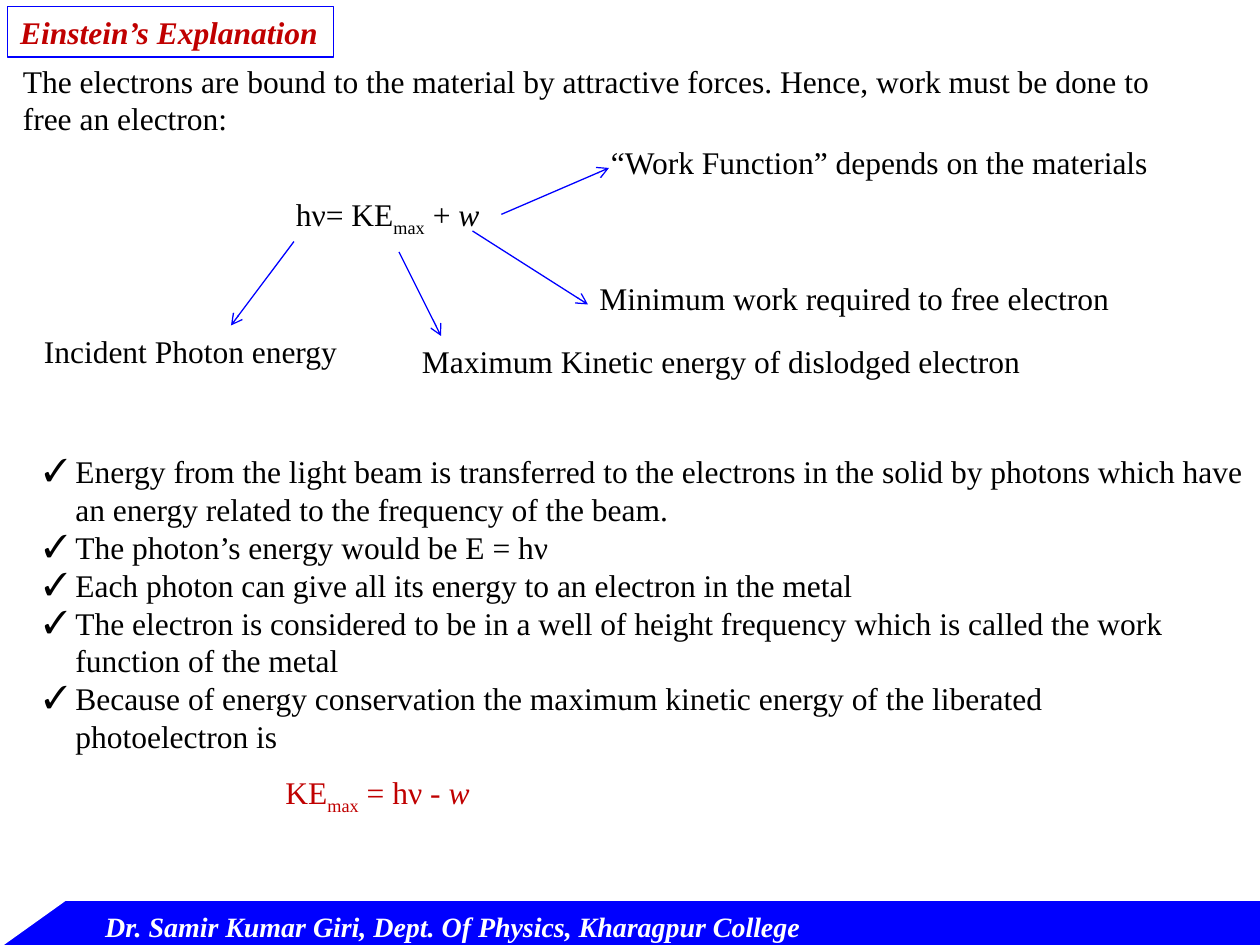
"""Build the slide on Einstein's explanation of the photoelectric effect."""
from dataclasses import dataclass

from lxml.etree import SubElement
from pptx import Presentation
from pptx.dml.color import RGBColor
from pptx.enum.shapes import MSO_CONNECTOR as Connector, MSO_SHAPE as Preset
from pptx.enum.text import MSO_ANCHOR as Anchor, MSO_AUTO_SIZE as AutoSize, PP_ALIGN as Align
from pptx.oxml.ns import qn
from pptx.util import Pt

FONT = "Times New Roman"
BLACK, WHITE, BLUE, RED = "000000", "FFFFFF", "0000FF", "C00000"


@dataclass(frozen=True)
class Box:
    left: float
    top: float
    width: float
    height: float

    def lengths(self) -> tuple:
        return Pt(self.left), Pt(self.top), Pt(self.width), Pt(self.height)


@dataclass(frozen=True)
class Label:
    text: str
    box: Box
    wrap: bool = False


@dataclass(frozen=True)
class Formula:
    pieces: tuple
    box: Box
    color: str


@dataclass(frozen=True)
class Arrow:
    start: tuple
    end: tuple


TITLE = Label("Einstein’s Explanation", Box(4.3, 3.6, 186.5, 29))
LABELS = (
    Label(
        "The electrons are bound to the material by attractive forces. "
        "Hence, work must be done to free an electron:",
        Box(6, 31.7, 684, 51),
        wrap=True,
    ),
    Label("Incident Photon energy", Box(18, 186, 187, 29)),
    Label("Maximum Kinetic energy of dislodged electron", Box(234, 192, 358.5, 29)),
    Label("“Work Function” depends on the materials", Box(342, 78, 339, 29)),
    Label("Minimum work required to free electron", Box(335.5, 156, 318, 29)),
)
FORMULAS = (
    Formula(("hν= KE", "max", " + ", "w"), Box(162, 108, 124.5, 29), BLACK),
    Formula(("KE", "max", " = hν - ", "w"), Box(156, 438, 126, 29), RED),
)
ARROWS = (
    Arrow((168, 138), (132, 186)),
    Arrow((228, 144), (252, 192)),
    Arrow((286.5, 122.5), (348, 96)),
    Arrow((270, 132), (336, 174)),
)
POINTS = (
    "Energy from the light beam is transferred to the electrons in the solid "
    "by photons which have an energy related to the frequency of the beam.",
    "The photon’s energy would be E = hν",
    "Each photon can give all its energy to an electron in the metal",
    "The electron is considered to be in a well of height frequency "
    "which is called the work function of the metal",
    "Because of energy conservation the maximum kinetic energy of the liberated\v"
    "photoelectron is",
)
POINTS_BOX = Box(18, 255, 702, 182)
FOOTER = Label(
    "Dr. Samir Kumar Giri, Dept. Of Physics, Kharagpur College", Box(53, 516, 433, 26.6)
)


def rgb(color: str) -> RGBColor:
    return RGBColor.from_string(color)


def format_text(frame, color: str, size: float = 18, strong: bool = False) -> None:
    for paragraph in frame.paragraphs:
        paragraph.alignment = Align.LEFT
        for run in paragraph.runs:
            run.font.name = FONT
            run.font.size = Pt(size)
            run.font.color.rgb = rgb(color)
            run.font.bold = run.font.italic = strong


def add_text(slide, label: Label, color: str = BLACK, size: float = 18, strong: bool = False):
    frame = slide.shapes.add_textbox(*label.box.lengths()).text_frame
    frame.text = label.text
    frame.word_wrap = label.wrap
    frame.auto_size = AutoSize.SHAPE_TO_FIT_TEXT
    format_text(frame, color, size, strong)
    return frame


def add_title(slide) -> None:
    title = slide.shapes.title
    title.left, title.top, title.width, title.height = TITLE.box.lengths()
    title.line.color.rgb = rgb(BLUE)
    title.line.width = Pt(0.75)
    frame = title.text_frame
    frame.text = TITLE.text
    frame.word_wrap = True
    frame.auto_size = AutoSize.NONE
    frame.vertical_anchor = Anchor.TOP
    format_text(frame, RED, strong=True)


def add_formula(slide, formula: Formula) -> None:
    frame = add_text(slide, Label("", formula.box))
    paragraph = frame.paragraphs[0]
    for piece in formula.pieces:
        paragraph.add_run().text = piece
    format_text(frame, formula.color)
    paragraph.runs[1]._r.get_or_add_rPr().set("baseline", "-25000")
    paragraph.runs[-1].font.italic = True


def add_arrow(slide, arrow: Arrow) -> None:
    ends = [Pt(value) for value in arrow.start + arrow.end]
    connector = slide.shapes.add_connector(Connector.STRAIGHT, *ends)
    connector.line.color.rgb = rgb(BLUE)
    connector.line.width = Pt(0.75)
    properties = connector._element.spPr
    SubElement(properties.find(qn("a:ln")), qn("a:tailEnd"), type="arrow")
    SubElement(properties, qn("a:effectLst"))


def add_points(slide) -> None:
    frame = add_text(slide, Label("\n".join(POINTS), POINTS_BOX, wrap=True))
    frame.margin_right = 0
    for paragraph in frame.paragraphs:
        properties = paragraph._p.get_or_add_pPr()
        properties.set("marL", str(Pt(18)))
        properties.set("indent", str(-Pt(18)))
        SubElement(properties, qn("a:buFont"), typeface=FONT)
        SubElement(properties, qn("a:buChar"), char="✓")


def add_solid(slide, preset: Preset, box: Box, color: str, rotation: float = 0) -> None:
    shape = slide.shapes.add_shape(preset, *box.lengths())
    shape.rotation = rotation
    shape.shadow.inherit = False
    shape.fill.solid()
    shape.fill.fore_color.rgb = rgb(color)
    shape.line.color.rgb = rgb(color)
    shape.line.width = Pt(2)


def main() -> None:
    presentation = Presentation()
    presentation.slide_width, presentation.slide_height = Pt(720), Pt(540)
    slide = presentation.slides.add_slide(presentation.slide_layouts[5])
    add_title(slide)
    for label in LABELS:
        add_text(slide, label)
    for formula in FORMULAS:
        add_formula(slide, formula)
    for arrow in ARROWS:
        add_arrow(slide, arrow)
    add_points(slide)
    add_solid(slide, Preset.RECTANGLE, Box(0, 516, 720, 24), BLUE)
    add_solid(slide, Preset.RIGHT_TRIANGLE, Box(6.5, 504, 30, 42), WHITE, rotation=90)
    add_text(slide, FOOTER, WHITE, size=16, strong=True)
    presentation.save("out.pptx")


if __name__ == "__main__":
    main()
